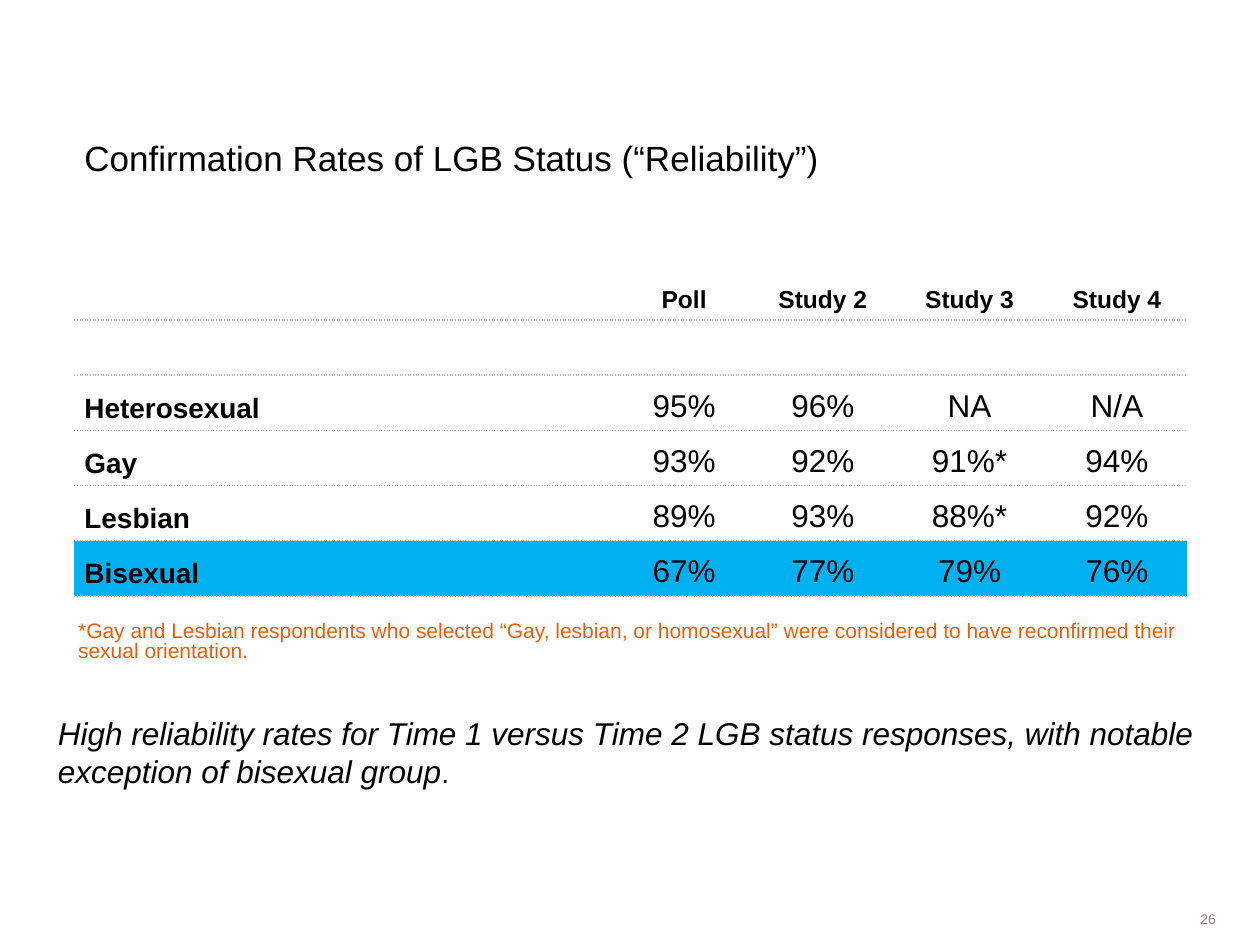
from lxml import etree
from pptx import Presentation
from pptx.dml.color import RGBColor
from pptx.enum.shapes import MSO_SHAPE
from pptx.enum.text import MSO_ANCHOR, PP_ALIGN
from pptx.oxml.ns import qn
from pptx.util import Inches, Pt

BLACK = RGBColor(0x00, 0x00, 0x00)
WHITE = RGBColor(0xFF, 0xFF, 0xFF)
GRAY = RGBColor(0x92, 0x85, 0x80)
ORANGE = RGBColor(0xE9, 0x5E, 0x0F)
BLUE = RGBColor(0x00, 0xB0, 0xF0)
RULE = RGBColor(0xBE, 0xB6, 0xB3)
LEFT, CENTER, RIGHT = PP_ALIGN.LEFT, PP_ALIGN.CENTER, PP_ALIGN.RIGHT
TOP, MIDDLE, BOTTOM = MSO_ANCHOR.TOP, MSO_ANCHOR.MIDDLE, MSO_ANCHOR.BOTTOM
RECT = MSO_SHAPE.RECTANGLE
NO_STYLE = "{2D5ABB26-0587-4C30-8999-92F81FD0307C}"


def add_run(p, text, size, color=BLACK, **formats):
    r = p.add_run()
    r.text = text
    r.font.color.rgb = color
    for name, value in {"name": "Arial", "size": Pt(size), **formats}.items():
        setattr(r.font, name, value)


def add_rule(cell):
    ln = etree.SubElement(cell._tc.get_or_add_tcPr(), qn("a:lnB"), w=str(Pt(1)))
    fill = etree.SubElement(ln, qn("a:solidFill"))
    etree.SubElement(fill, qn("a:srgbClr"), val=str(RULE))
    etree.SubElement(ln, qn("a:prstDash"), val="sysDot")


prs = Presentation()
prs.slide_width, prs.slide_height = Inches(10), Inches(7.5)
s = prs.slides.add_slide(prs.slide_layouts[6])

number = s.shapes.add_shape(RECT, Inches(8.23), Inches(7.21), Inches(1.42), Inches(0.16))
number.shadow.inherit = False
number.fill.solid()
number.fill.fore_color.rgb = WHITE
number.line.fill.background()
title = s.shapes.add_textbox(Inches(0.67), Inches(0.59), Inches(7.33), Inches(0.83))
footnote = s.shapes.add_textbox(Inches(0.62), Inches(4.92), Inches(8.92), Inches(0.62))
summary = s.shapes.add_textbox(Inches(0.46), Inches(5.67), Inches(9.08), Inches(0.92))

texts = [
    (number, MIDDLE, RIGHT, 0, 1, [("26", 8, GRAY, False)]),
    (title, BOTTOM, LEFT, 0, 1,
     [("Confirmation Rates of LGB Status (“Reliability”)", 20, BLACK, False)]),
    (footnote, TOP, LEFT, 0.02, 0.8,
     [("*Gay and Lesbian respondents who selected “Gay, lesbian, or homosexual” "
       "were considered to have reconfirmed their sexual orientation.", 12, ORANGE, False)]),
    (summary, TOP, LEFT, 0, 1,
     [("High reliability rates for Time 1 versus Time 2 LGB status responses, "
       "with notable exception of bisexual group", 18, BLACK, True),
      (".", 16, BLACK, False)]),
]
for sp, anchor, align, inset, spacing, runs in texts:
    tf = sp.text_frame
    formats = {"word_wrap": True, "vertical_anchor": anchor, "margin_left": 0,
               "margin_right": 0, "margin_top": Inches(inset), "margin_bottom": 0}
    for name, value in formats.items():
        setattr(tf, name, value)
    p = tf.paragraphs[0]
    p.alignment, p.line_spacing = align, spacing
    for text, size, color, italic in runs:
        add_run(p, text, size, color, italic=italic)

rates = [
    ["", "Poll", "Study 2", "Study 3", "Study 4"],
    [""] * 5,
    ["Heterosexual", "95%", "96%", "NA", "N/A"],
    ["Gay", "93%", "92%", "91%*", "94%"],
    ["Lesbian", "89%", "93%", "88%*", "92%"],
    ["Bisexual", "67%", "77%", "79%", "76%"],
]
table = s.shapes.add_table(len(rates), len(rates[0]), Inches(0.59), Inches(1.75),
                           Inches(8.83), Inches(2.98)).table
table._tbl.tblPr.find(qn("a:tableStyleId")).text = NO_STYLE
table.first_row = table.horz_banding = False
for col, width in zip(table.columns, [4.29, 1.1, 1.1, 1.23, 1.11]):
    col.width = Inches(width)
for i, row in enumerate(rates):
    table.rows[i].height = Inches(2.19 / 5 if i else 0.79)
    for j, text in enumerate(row):
        cell = table.cell(i, j)
        add_rule(cell)
        if row[0] == "Bisexual":
            cell.fill.solid()
            cell.fill.fore_color.rgb = BLUE
        else:
            cell.fill.background()
        formats = {"vertical_anchor": BOTTOM, "margin_left": Inches(0.08),
                   "margin_right": Inches(0.08), "margin_top": Inches(0.05),
                   "margin_bottom": Inches(0.05)}
        for name, value in formats.items():
            setattr(cell, name, value)
        if text:
            p = cell.text_frame.paragraphs[0]
            p.alignment = CENTER if j else LEFT
            size = 14 if i == 0 else 18 if j else 16
            add_run(p, text, size, bold=i == 0 or j == 0)

prs.save("out.pptx")
